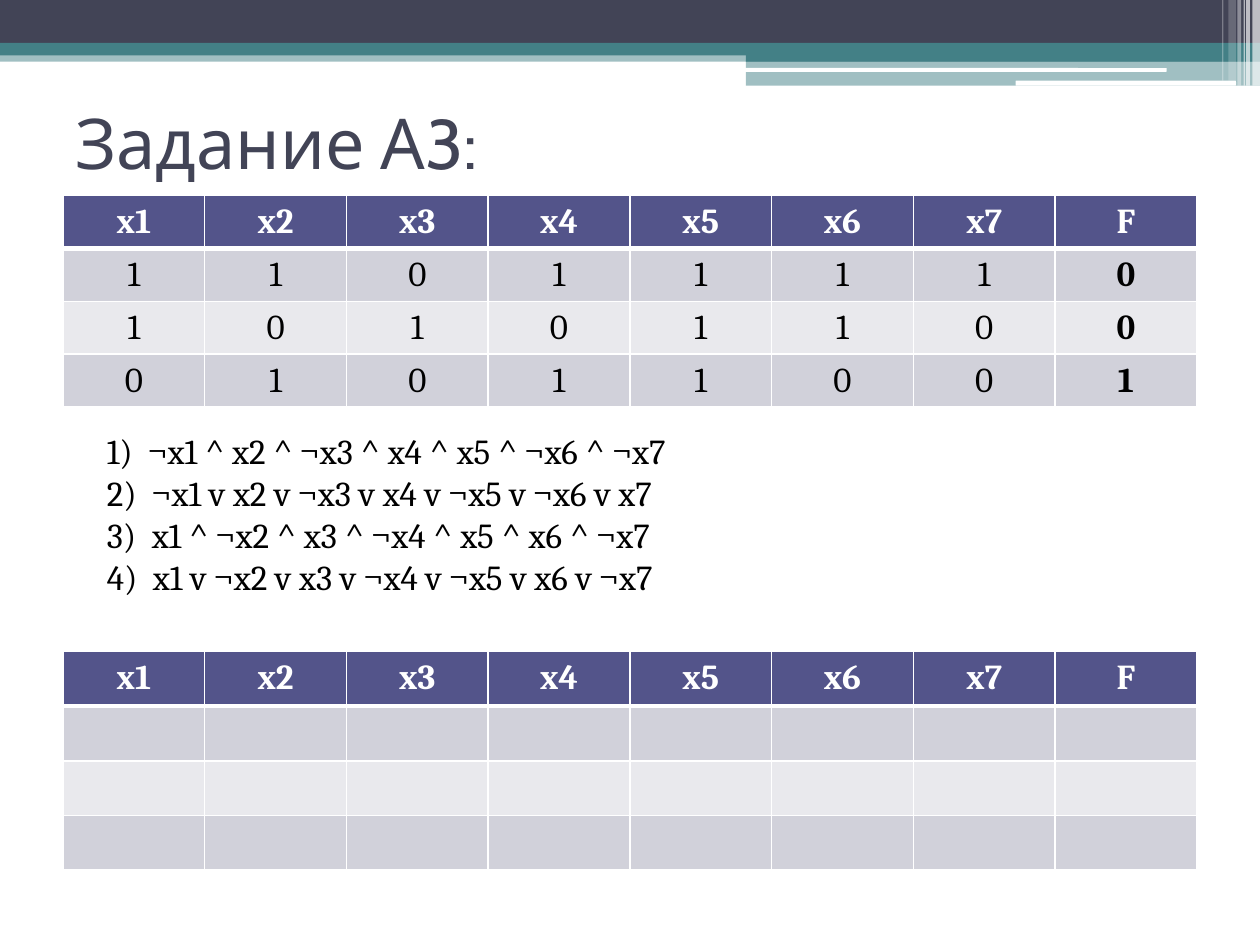
import dataclasses

import lxml.etree
import pptx
import pptx.dml.color
import pptx.enum.shapes
import pptx.enum.text
import pptx.oxml.ns
import pptx.util

Inches = pptx.util.Inches
Pt = pptx.util.Pt
ALIGN = pptx.enum.text.PP_ALIGN
ANCHOR = pptx.enum.text.MSO_ANCHOR
SHAPES = pptx.enum.shapes.MSO_SHAPE


@dataclasses.dataclass(frozen=True)
class Theme:
    dark: str = "424456"
    teal: str = "438086"
    header: str = "53548A"
    odd_row: str = "D1D1DA"
    even_row: str = "E9E9ED"
    white: str = "FFFFFF"
    black: str = "000000"
    title_font: str = "Cabin"
    body_font: str = "Cambria"
    title_size: int = 40
    body_size: int = 20


THEME = Theme()
WIDTH, HEIGHT = 10, 7.5
MARGIN = 0.05 * WIDTH
CONTENT_WIDTH = WIDTH - 2 * MARGIN

BANDS = [
    (0, 0.4, 10, 0.09, THEME.teal, 50),
    (0, 0, 10, 0.34, THEME.dark, 100),
    (0, 0.34, 10, 0.1, THEME.teal, 100),
    (5.92, 0.39, 4.08, 0.1, THEME.teal, 100),
    (5.92, 0.48, 4.08, 0.2, THEME.teal, 50),
]
WHITE_BARS = [(5.91, 0.54, 3.35, 0.03), (8.06, 0.64, 1.75, 0.04)]
STRIPES = [
    (9.94, 0.06, 0.68, 65),
    (9.89, 0.03, 0.68, 65),
    (9.87, 0.01, 0.68, 60),
    (9.82, 0.03, 0.68, 40),
    (9.75, 0.06, 0.64, 20),
    (9.7, 0.01, 0.64, 30),
]

VARIABLES = ["x1", "x2", "x3", "x4", "x5", "x6", "x7", "F"]
TRUTH_ROWS = ["11011110", "10101100", "01011001"]
BLANK_ROWS = [[""] * len(VARIABLES)] * 3
ANSWERS = [
    "1)  ¬x1 ^ x2 ^ ¬x3 ^ x4 ^ x5 ^ ¬x6 ^ ¬x7",
    "2)  ¬x1 v x2 v ¬x3 v x4 v ¬x5 v ¬x6 v x7",
    "3)  x1 ^ ¬x2 ^ x3 ^ ¬x4 ^ x5 ^ x6 ^ ¬x7",
    "4)  x1 v ¬x2 v x3 v ¬x4 v ¬x5 v x6 v ¬x7",
]


def rgb(color):
    return pptx.dml.color.RGBColor.from_string(color)


def place(shape, left, top, width, height):
    shape.left, shape.top = Inches(left), Inches(top)
    shape.width, shape.height = Inches(width), Inches(height)


def style_para(para, font, size, color, bold=False, align=ALIGN.LEFT):
    para.alignment = align
    para.font.name = font
    para.font.size = Pt(size)
    para.font.bold = bold
    para.font.color.rgb = rgb(color)


def add_band(page, left, top, width, height, color, opacity=100, kind=SHAPES.RECTANGLE):
    band = page.shapes.add_shape(
        kind, Inches(left), Inches(top), Inches(width), Inches(height))
    band.shadow.inherit = False
    band.line.fill.background()
    band.fill.solid()
    band.fill.fore_color.rgb = rgb(color)
    if opacity < 100:
        shade = band.fill._xPr.find(".//" + pptx.oxml.ns.qn("a:srgbClr"))
        alpha = lxml.etree.SubElement(shade, pptx.oxml.ns.qn("a:alpha"))
        alpha.set("val", str(opacity * 1000))


def add_header_art(page):
    for band in BANDS:
        add_band(page, *band)
    for bar in WHITE_BARS:
        add_band(page, *bar, THEME.white, kind=SHAPES.ROUNDED_RECTANGLE)
    for left, width, height, opacity in STRIPES:
        add_band(page, left, 0, width, height, THEME.white, opacity)


def set_title(page, text):
    title = page.shapes.title
    place(title, MARGIN, 0.7, CONTENT_WIDTH, 0.85)
    title.text_frame.text = text
    title.text_frame.vertical_anchor = ANCHOR.MIDDLE
    style_para(title.text_frame.paragraphs[0], THEME.title_font,
               THEME.title_size, THEME.dark)


def set_borders(cell, bottom):
    properties = cell._tc.get_or_add_tcPr()
    widths = {"a:lnL": 1, "a:lnR": 1, "a:lnT": 1, "a:lnB": bottom}
    for position, (tag, width) in enumerate(widths.items()):
        line = lxml.etree.Element(pptx.oxml.ns.qn(tag), w=str(Pt(width)))
        fill = lxml.etree.SubElement(line, pptx.oxml.ns.qn("a:solidFill"))
        lxml.etree.SubElement(fill, pptx.oxml.ns.qn("a:srgbClr"), val=THEME.white)
        properties.insert(position, line)


def add_truth_table(page, top, row_height, body):
    rows = [VARIABLES, *body]
    table = page.shapes.add_table(
        len(rows), len(VARIABLES), Inches(MARGIN), Inches(top),
        Inches(CONTENT_WIDTH), Inches(row_height * len(rows))).table
    for row_number, values in enumerate(rows):
        is_header = row_number == 0
        row_fill = THEME.odd_row if row_number % 2 else THEME.even_row
        for column, value in enumerate(values):
            cell = table.cell(row_number, column)
            cell.text = value
            cell.fill.solid()
            cell.fill.fore_color.rgb = rgb(THEME.header if is_header else row_fill)
            set_borders(cell, 3 if is_header or row_number == 0 else 1)
            style_para(cell.text_frame.paragraphs[0], THEME.body_font, THEME.body_size,
                       THEME.white if is_header else THEME.black,
                       is_header or column == len(VARIABLES) - 1, ALIGN.CENTER)


def add_answers(page):
    box = page.shapes.add_textbox(
        Inches(0.75), Inches(3.36), Inches(7.24), Inches(1.45))
    frame = box.text_frame
    frame.word_wrap = True
    frame.text = "\n".join(ANSWERS)
    for para in frame.paragraphs:
        style_para(para, THEME.body_font, THEME.body_size, THEME.black)


def main():
    deck = pptx.Presentation()
    deck.slide_width, deck.slide_height = Inches(WIDTH), Inches(HEIGHT)
    page = deck.slides.add_slide(deck.slide_layouts[5])
    add_header_art(page)
    set_title(page, "Задание А3:")
    add_truth_table(page, 1.55, 0.42, TRUTH_ROWS)
    add_answers(page)
    add_truth_table(page, 5.17, 0.43, BLANK_ROWS)
    deck.save("out.pptx")


if __name__ == "__main__":
    main()
